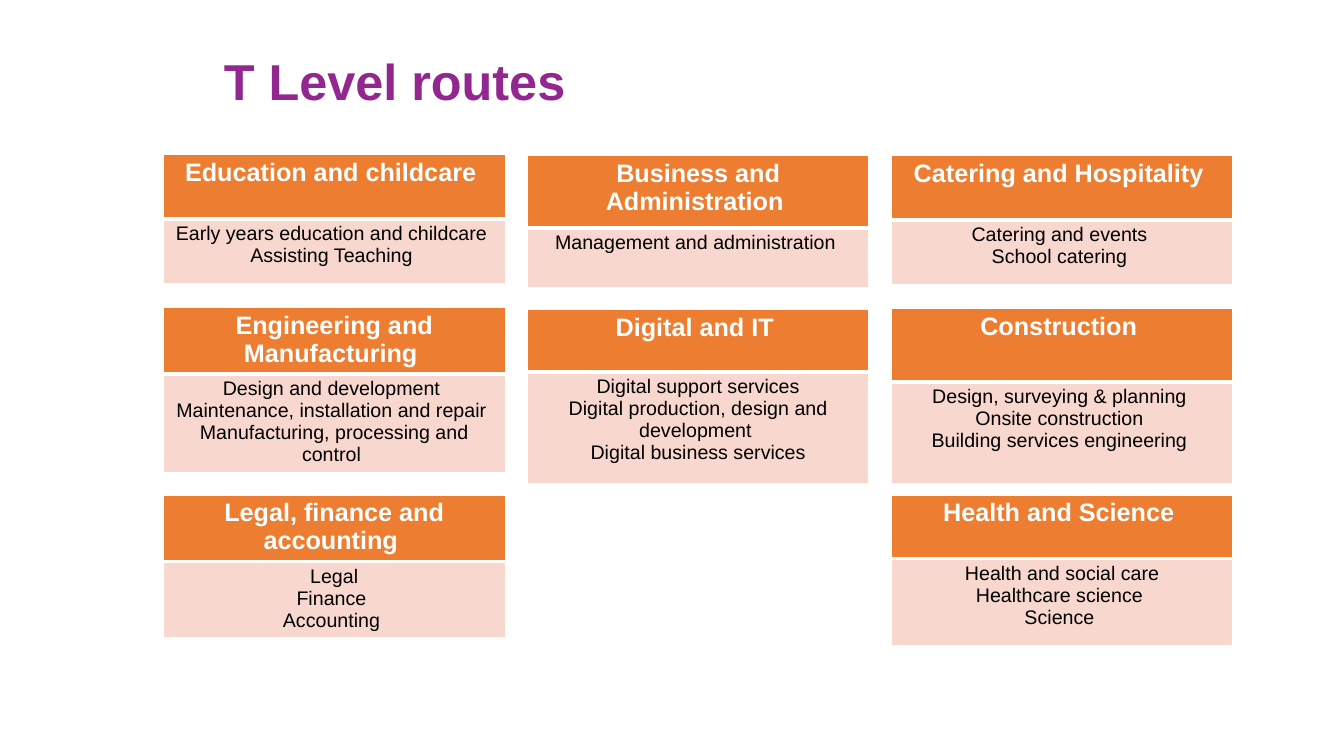
"""Build the slide of T Level routes."""
from lxml import etree
from pptx import Presentation
from pptx.dml.color import RGBColor
from pptx.enum.text import MSO_ANCHOR, MSO_AUTO_SIZE, PP_ALIGN
from pptx.oxml.ns import qn
from pptx.util import Emu, Pt

PX = 9144
FONT = "Arial"
PURPLE = RGBColor(0x91, 0x27, 0x8F)
ORANGE = RGBColor(0xED, 0x7D, 0x31)
PINK = RGBColor(0xF8, 0xD7, 0xCE)
WHITE = RGBColor(0xFF, 0xFF, 0xFF)
BLACK = RGBColor(0x00, 0x00, 0x00)
CENTER, LEFT = PP_ALIGN.CENTER, PP_ALIGN.LEFT
TOP = MSO_ANCHOR.TOP
NO_FIT = MSO_AUTO_SIZE.NONE

CARD_LEFT, CARD_STEP, CARD_WIDTH = 162, 361, 339

ROUTES = [
    (2, 306, "Construction ", 73, 101,
     ["Design, surveying & planning ", "Onsite construction ",
      "Building services engineering "]),
    (0, 305, "Engineering and Manufacturing ", 66, 98,
     ["Design and development ", "Maintenance, installation and repair ",
      "Manufacturing, processing and control "]),
    (0, 491, "Legal, finance and accounting ", 66, 76,
     ["Legal", "Finance ", "Accounting "]),
    (1, 154, "Business and Administration ", 72, 59,
     ["Management and administration "]),
    (1, 307, "Digital and IT ", 62, 111,
     ["Digital support services",
      "Digital production, design and development ",
      "Digital business services"]),
    (2, 491, "Health and Science ", 63, 87,
     ["Health and social care", "Healthcare science ", "Science "]),
    (0, 153, "Education and childcare ", 64, 64,
     ["Early years education and childcare ", "Assisting Teaching "]),
    (2, 154, "Catering and Hospitality ", 64, 64,
     ["Catering and events ", "School catering "]),
]


def px(length):
    return Emu(length * PX)


def style_text(frame, size, color, bold, align):
    for para in frame.paragraphs:
        para.alignment = align
        for span in para.runs:
            span.font.name = FONT
            span.font.size = Pt(size)
            span.font.bold = bold
            span.font.color.rgb = color


def add_borders(cell, top, bottom):
    properties = cell._tc.get_or_add_tcPr()
    for side, width in (("L", 1), ("R", 1), ("T", top), ("B", bottom)):
        line = etree.SubElement(properties, qn(f"a:ln{side}"), w=str(Pt(width)))
        fill = etree.SubElement(line, qn("a:solidFill"))
        etree.SubElement(fill, qn("a:srgbClr"), val=str(WHITE))


def fill_cell(cell, lines, size, color, bold, background, borders):
    add_borders(cell, *borders)
    cell.fill.solid()
    cell.fill.fore_color.rgb = background
    cell.margin_left = cell.margin_right = px(7)
    cell.margin_top = cell.margin_bottom = px(4)
    cell.vertical_anchor = TOP
    cell.text_frame.text = "\n".join(lines)
    style_text(cell.text_frame, size, color, bold, CENTER)


def add_route(page, column, top, name, header_height, body_height, subjects):
    frame = page.shapes.add_table(
        2, 1, px(CARD_LEFT + column * CARD_STEP), px(top),
        px(CARD_WIDTH), px(header_height + body_height))
    table = frame.table
    table.horz_banding = False
    table.rows[0].height = px(header_height)
    table.rows[1].height = px(body_height)
    fill_cell(table.cell(0, 0), [name], 18, WHITE, True, ORANGE, (1, 3))
    fill_cell(table.cell(1, 0), subjects, 14, BLACK, False, PINK, (3, 1))


def add_title(page, text):
    title = page.shapes.title
    title.left, title.top = px(212), px(52)
    title.width, title.height = px(1121), px(116)
    frame = title.text_frame
    frame.text = text
    frame.auto_size = NO_FIT
    frame.vertical_anchor = TOP
    frame.paragraphs[0].line_spacing = 0.9
    style_text(frame, 36, PURPLE, True, LEFT)


def main():
    deck = Presentation()
    deck.slide_width, deck.slide_height = px(1333), px(750)
    page = deck.slides.add_slide(deck.slide_layouts[5])
    add_title(page, "T Level routes")
    for route in ROUTES:
        add_route(page, *route)
    deck.save("out.pptx")


if __name__ == "__main__":
    main()
